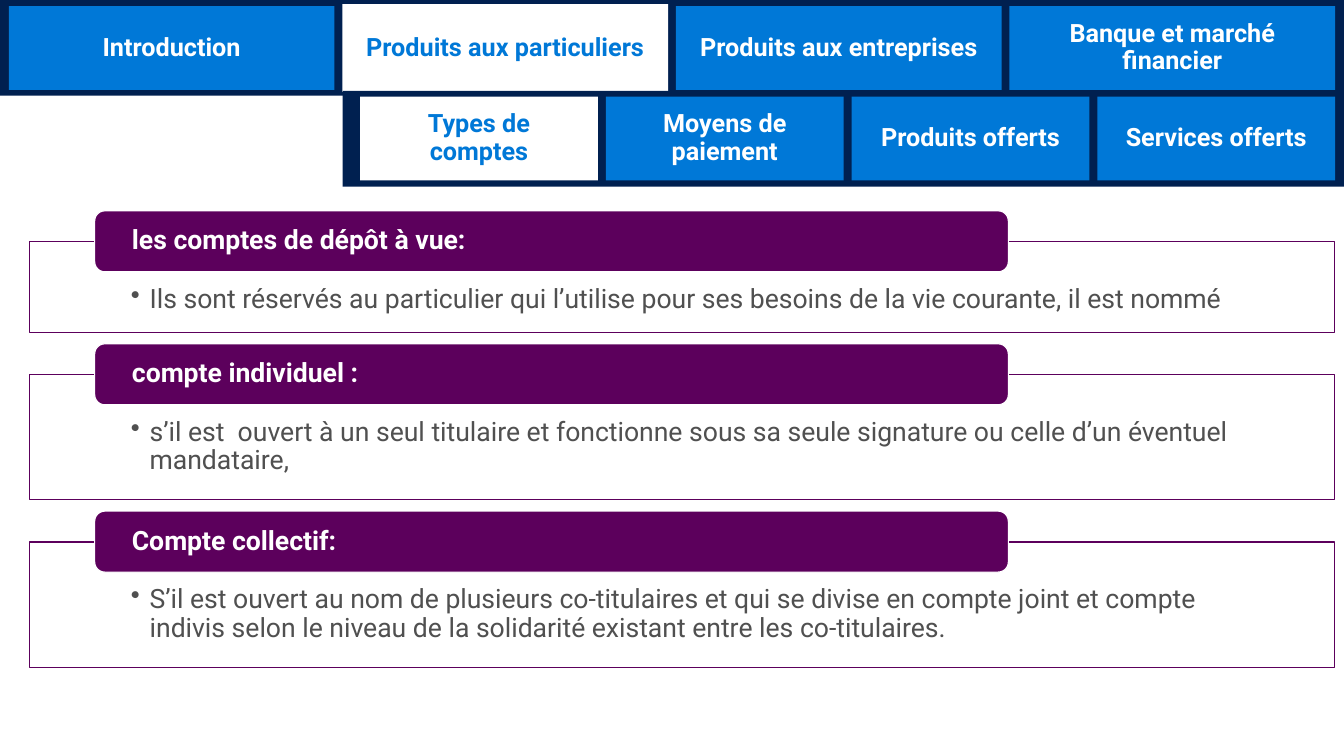
from lxml.etree import SubElement
from pptx import Presentation
from pptx.dml.color import RGBColor
from pptx.enum.shapes import MSO_SHAPE as Shape
from pptx.enum.text import MSO_ANCHOR as Anchor, PP_ALIGN as Align
from pptx.oxml.ns import qn
from pptx.util import Pt

COLORS = {
    "navy": "002050",
    "blue": "0078D7",
    "white": "FFFFFF",
    "purple": "5C005C",
    "gray": "505050",
}
FONT = "Roboto"
TAB_GAP = 5.6

CHAPTERS = [
    "Introduction",
    "Produits aux particuliers",
    "Produits aux entreprises",
    "Banque et marché financier",
]
SECTIONS = ["Types de comptes", "Moyens de paiement", "Produits offerts", "Services offerts"]
# title, body, panel height
ACCOUNTS = [
    (
        "les comptes de dépôt à vue:",
        "Ils sont réservés au particulier qui l’utilise pour ses besoins de la vie "
        "courante, il est nommé",
        65,
    ),
    (
        "compte individuel :",
        "s’il est  ouvert à un seul titulaire et fonctionne sous sa seule signature "
        "ou celle d’un éventuel mandataire,",
        89.5,
    ),
    (
        "Compte collectif:",
        "S’il est ouvert au nom de plusieurs co-titulaires et qui se divise en compte "
        "joint et compte indivis selon le niveau de la solidarité existant entre les "
        "co-titulaires.",
        89.5,
    ),
]


def color(name):
    return RGBColor.from_string(COLORS[name])


def add_block(page, left, top, width, height, fill, line=None, kind=Shape.RECTANGLE):
    block = page.shapes.add_shape(kind, Pt(left), Pt(top), Pt(width), Pt(height))
    block.shadow.inherit = False
    block.fill.solid()
    block.fill.fore_color.rgb = color(fill)
    if line:
        block.line.color.rgb = color(line)
        block.line.width = Pt(0.85)
    else:
        block.line.fill.background()
    return block


def write(block, text, size, ink, bold, align, anchor, insets):
    """Fill the block with one paragraph; insets are left/right, top, bottom."""
    side, top, bottom = insets
    frame = block.text_frame
    frame.word_wrap = True
    frame.vertical_anchor = anchor
    frame.margin_left = frame.margin_right = Pt(side)
    frame.margin_top, frame.margin_bottom = Pt(top), Pt(bottom)
    para = frame.paragraphs[0]
    para.alignment = align
    para.line_spacing = 0.9
    span = para.add_run()
    span.text = text
    span.font.name = FONT
    span.font.size = Pt(size)
    span.font.bold = bold
    span.font.color.rgb = color(ink)
    return para


def add_bullet(para, indent):
    props = para._p.get_or_add_pPr()
    props.set("marL", str(Pt(indent)))
    props.set("indent", str(-Pt(indent)))
    SubElement(props, qn("a:buChar")).set("char", "•")


def add_tabs(page, left, top, width, height, labels, active, lift=0):
    """Row of equal tabs; the active one is white and taller by lift on both sides."""
    tab_width = (width - TAB_GAP * (len(labels) - 1)) / len(labels)
    for index, label in enumerate(labels):
        chosen = index == active
        rise = lift if chosen else 0
        tab = add_block(
            page,
            left + index * (tab_width + TAB_GAP),
            top - rise,
            tab_width,
            height + 2 * rise,
            "white" if chosen else "blue",
        )
        ink = "blue" if chosen else "white"
        write(tab, label, 18, ink, True, Align.CENTER, Anchor.MIDDLE, (14.4, 11.5, 11.5))


def add_account(page, left, top, width, height, title, body):
    """Outlined panel with a heading that straddles its top edge."""
    panel = add_block(page, left, top, width, height, "white", "purple")
    para = write(panel, body, 19, "gray", False, Align.LEFT, Anchor.TOP, (72.4, 31, 10.8))
    add_bullet(para, 13.5)
    heading = add_block(
        page, left + width * 0.05, top - 22, width * 0.7, 43.6,
        "purple", "white", Shape.ROUNDED_RECTANGLE,
    )
    write(heading, title, 19, "white", True, Align.LEFT, Anchor.MIDDLE, (24.5, 0, 0))


def add_navigation(page, left, top, width):
    add_block(page, left, top, width, 68.4, "navy")
    add_tabs(page, left + 6.3, top + 4.4, width - 12.6, 59.8, CHAPTERS, 1, lift=1.4)
    submenu = left + 244.7
    add_block(page, submenu, top + 65, left + width - submenu, 68.4, "navy")
    add_tabs(page, submenu + 12.5, top + 69, width - 263.5, 59.8, SECTIONS, 0)


def add_accounts(page, left, top, width):
    for title, body, height in ACCOUNTS:
        add_account(page, left, top, width, height, title, body)
        top += height + 30


def main():
    deck = Presentation()
    deck.slide_width, deck.slide_height = Pt(960), Pt(540)
    page = deck.slides.add_slide(deck.slide_layouts[6])
    add_navigation(page, 0, 0, 960)
    add_accounts(page, 21, 172.6, 932.4)
    deck.save("out.pptx")


if __name__ == "__main__":
    main()
